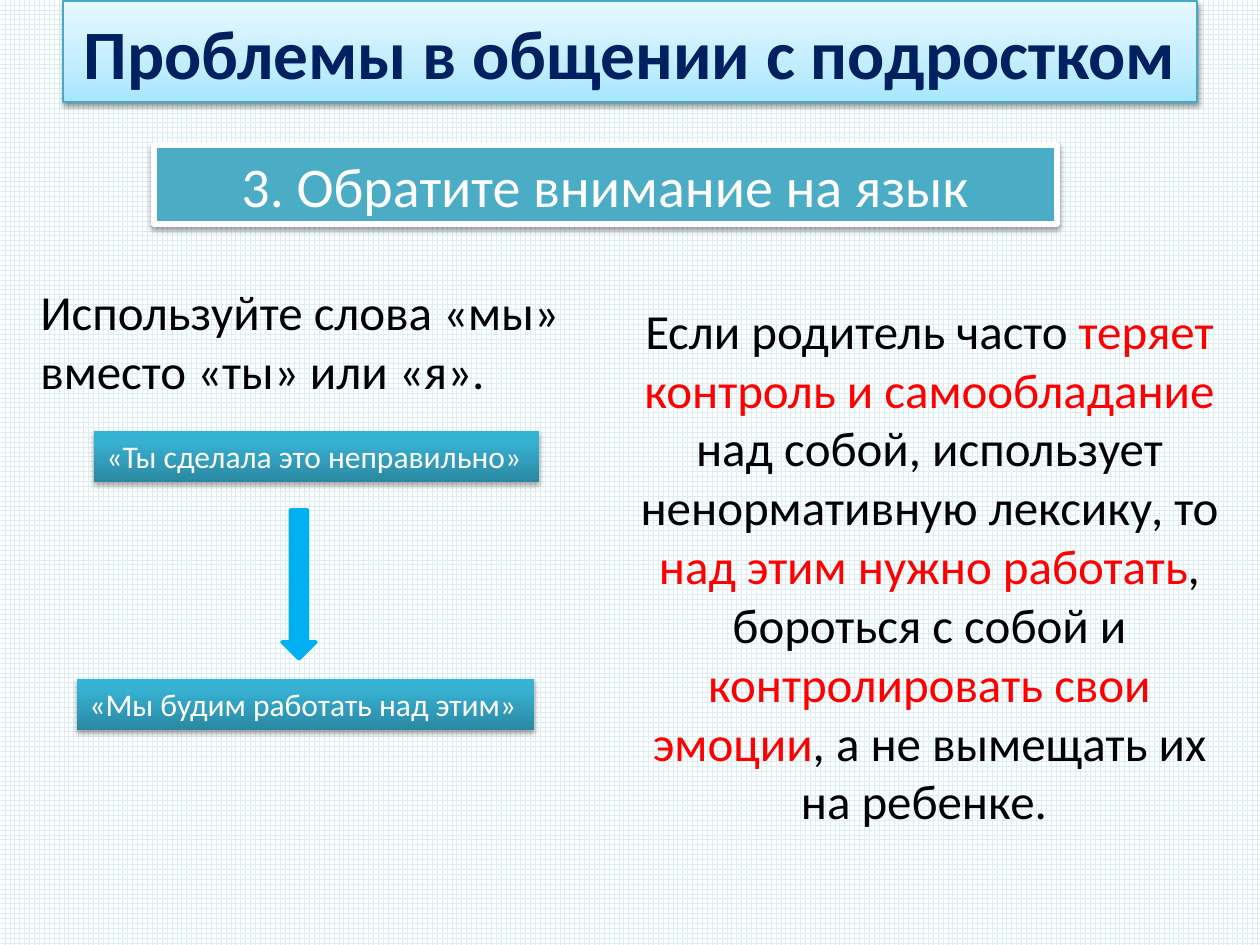
from lxml import etree
from pptx import Presentation
from pptx.dml.color import RGBColor
from pptx.enum.dml import MSO_PATTERN
from pptx.enum.shapes import MSO_SHAPE
from pptx.enum.text import MSO_ANCHOR, PP_ALIGN
from pptx.oxml.ns import qn
from pptx.util import Emu, Pt

RECTANGLE, DOWN_ARROW = MSO_SHAPE.RECTANGLE, MSO_SHAPE.DOWN_ARROW
LARGE_GRID = MSO_PATTERN.LARGE_GRID
TOP, MIDDLE = MSO_ANCHOR.TOP, MSO_ANCHOR.MIDDLE
LEFT, CENTER = PP_ALIGN.LEFT, PP_ALIGN.CENTER

EMU_PER_PX = 914400 / 126
FONT = "Calibri"
TITLE_ONLY = 5
COLORS = {
    "white": "FFFFFF", "black": "000000", "red": "FF0000", "navy": "002060",
    "grid": "DBEEF4", "teal": "4BACC6", "title line": "46AAC5", "arrow": "00B0F0",
}
TITLE_GRADIENT = [(0, "A7E6FF"), (35, "C1EDFF"), (100, "E7F8FF")]
QUOTE_GRADIENT = [(0, "2A88A2"), (80, "37B1D2"), (100, "34B4D6")]


def px(length):
    return Emu(round(length * EMU_PER_PX))


def color(name):
    return RGBColor.from_string(COLORS[name])


def place(shape, box):
    shape.left, shape.top, shape.width, shape.height = map(px, box)


def fill_solid(shape, name):
    shape.fill.solid()
    shape.fill.fore_color.rgb = color(name)


def fill_gradient(shape, stops):
    """Fill from bottom to top with (percent, hex) stops."""
    shape.fill.gradient()
    shape.fill.gradient_angle = 90
    stop_list = shape._element.spPr.find(qn("a:gradFill")).find(qn("a:gsLst"))
    for stop in list(stop_list):
        stop_list.remove(stop)
    for percent, value in stops:
        stop = etree.SubElement(stop_list, qn("a:gs"), pos=str(percent * 1000))
        etree.SubElement(stop, qn("a:srgbClr"), val=value)


def outline(shape, name, width):
    shape.line.color.rgb = color(name)
    shape.line.width = Pt(width)


def add_shadow(shape, opacity, distance):
    shape.shadow.inherit = False
    effects = shape._element.spPr.find(qn("a:effectLst"))
    shadow = etree.SubElement(
        effects, qn("a:outerShdw"), blurRad=str(Pt(3.1)), dist=str(Pt(distance)),
        dir="5400000", rotWithShape="0")
    tint = etree.SubElement(shadow, qn("a:srgbClr"), val=COLORS["black"])
    etree.SubElement(tint, qn("a:alpha"), val=str(opacity * 1000))


def write(shape, runs, size, align=LEFT, anchor=TOP, wrap=True, bold=False):
    """Write one paragraph from (text, colour name) runs."""
    frame = shape.text_frame
    frame.word_wrap = wrap
    frame.vertical_anchor = anchor
    paragraph = frame.paragraphs[0]
    paragraph.alignment = align
    paragraph.font.name = FONT
    paragraph.font.size = Pt(size)
    paragraph.font.bold = bold
    for text, name in runs:
        run = paragraph.add_run()
        run.text = text
        run.font.color.rgb = color(name)


def add_box(slide, kind, box):
    shape = slide.shapes.add_shape(kind, *map(px, box))
    shape.shadow.inherit = False
    return shape


def add_text(slide, box, runs, align=LEFT):
    write(slide.shapes.add_textbox(*map(px, box)), runs, 28, align)


def format_title(slide, box):
    title = slide.shapes.title
    place(title, box)
    fill_gradient(title, TITLE_GRADIENT)
    outline(title, "title line", 0.75)
    add_shadow(title, 38, 1.6)
    write(title, [("Проблемы в общении с подростком", "navy")], 39.6,
          CENTER, MIDDLE, bold=True)


def add_subheading(slide, box):
    banner = add_box(slide, RECTANGLE, box)
    fill_solid(banner, "teal")
    outline(banner, "white", 3)
    add_shadow(banner, 38, 1.6)
    write(banner, [("3. Обратите внимание на язык", "white")], 32, CENTER)


def add_quote(slide, box, text):
    quote = add_box(slide, RECTANGLE, box)
    fill_gradient(quote, QUOTE_GRADIENT)
    quote.line.fill.background()
    add_shadow(quote, 35, 1.8)
    write(quote, [(text, "white")], 18, wrap=False)


def add_wording_advice(slide, box):
    """Advice on top, then a phrase with an arrow down to its better wording."""
    left, top, width, _ = box
    add_text(slide, (left, top, width, 131),
             [("Используйте слова «мы» вместо «ты» или «я».", "black")])
    add_quote(slide, (left + 66, top + 156, 445, 51), "«Ты сделала это неправильно»")
    add_quote(slide, (left + 49, top + 404, 457, 51), "«Мы будим работать над этим»")
    arrow = add_box(slide, DOWN_ARROW, (left + 254, top + 235, 34, 149))
    fill_solid(arrow, "arrow")
    outline(arrow, "arrow", 2)


def add_self_control_advice(slide, box):
    add_text(slide, box, [
        ("Если родитель часто", "black"),
        (" теряет контроль и самообладание ", "red"),
        ("над собой, использует ненормативную лексику, то ", "black"),
        ("над этим нужно работать", "red"),
        (", бороться с собой и ", "black"),
        ("контролировать свои эмоции", "red"),
        (", а не вымещать их на ребенке.\u00a0".replace("\u00a0", " "), "black"),
    ], CENTER)


def set_background(slide):
    fill = slide.background.fill
    fill.patterned()
    fill.pattern = LARGE_GRID
    fill.fore_color.rgb = color("grid")
    fill.back_color.rgb = color("white")


def main():
    deck = Presentation()
    deck.slide_width, deck.slide_height = px(1260), px(945)
    slide = deck.slides.add_slide(deck.slide_layouts[TITLE_ONLY])
    set_background(slide)
    format_title(slide, (63, 1, 1134, 101))
    add_subheading(slide, (154, 145, 903, 79))
    add_wording_advice(slide, (28, 275, 556, 455))
    add_self_control_advice(slide, (620, 294, 619, 547))
    deck.save("out.pptx")


if __name__ == "__main__":
    main()
